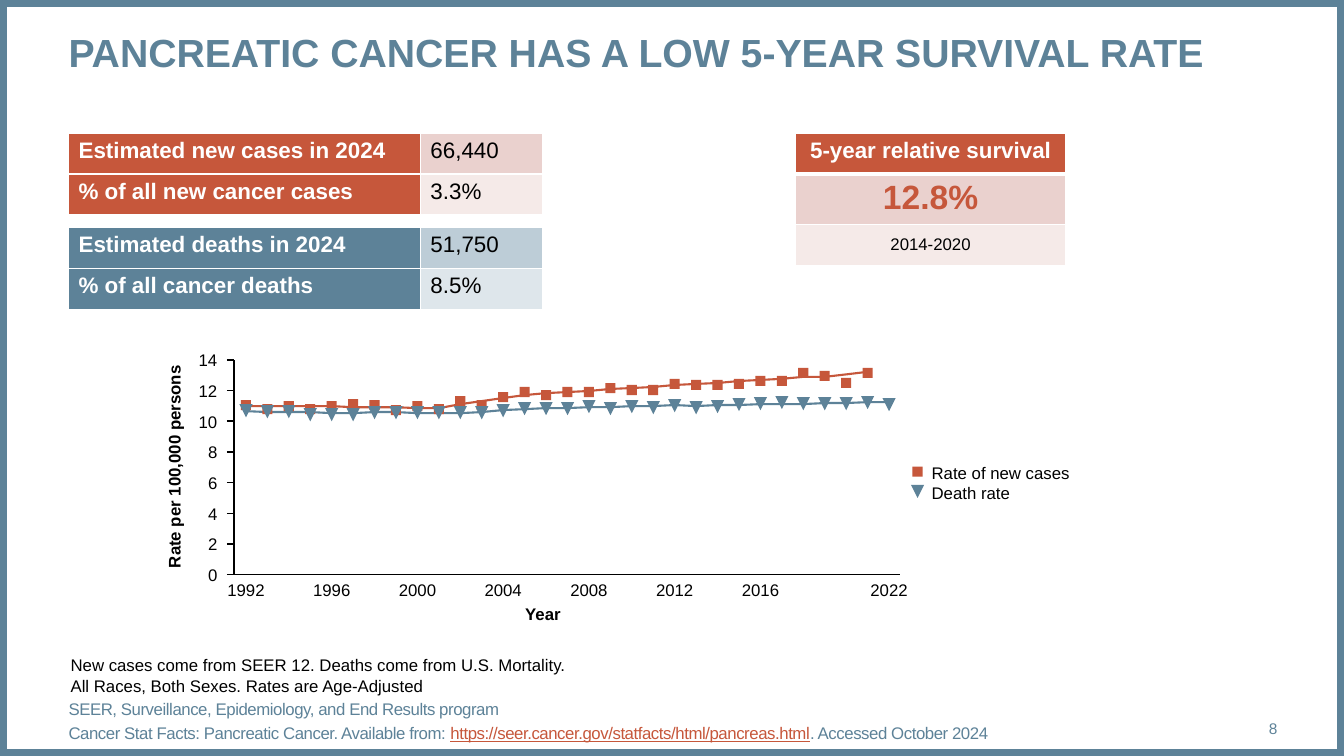
from dataclasses import dataclass

from lxml import etree
from pptx import Presentation
from pptx import util as u
from pptx.dml.color import RGBColor
from pptx.enum import shapes, text
from pptx.oxml import ns

WIDE, HIGH = u.Inches(13.33), u.Inches(7.5)
LEFT, MID, RIGHT = text.PP_ALIGN.LEFT, text.PP_ALIGN.CENTER, text.PP_ALIGN.RIGHT
SQUARE = shapes.MSO_SHAPE.RECTANGLE
WEDGE = shapes.MSO_SHAPE.ISOSCELES_TRIANGLE


@dataclass(frozen=True)
class Theme:
    font: str = "Arial"
    blue: str = "5D8298"
    blues: tuple = ("BDCDD7", "DEE6EB")
    red: str = "C6573B"
    reds: tuple = ("EAD1CE", "F5EAE8")
    black: str = "000000"
    white: str = "FFFFFF"
    title: int = 28
    big: int = 24
    cell: int = 16
    body: int = 12
    page: int = 11


T = Theme()

# Rates per 100,000 persons, one value a year from 1992
CASES = [11.04, 10.78, 10.98, 10.78, 10.98, 11.11, 11.04, 10.72, 10.98, 10.78,
         11.31, 11.04, 11.57, 11.9, 11.7, 11.9, 11.9, 12.16, 12.03, 12.03,
         12.43, 12.36, 12.36, 12.43, 12.62, 12.62, 13.15, 12.95, 12.49, 13.15]
DEATHS = [10.68, 10.62, 10.62, 10.42, 10.42, 10.42, 10.55, 10.55, 10.55, 10.55,
          10.55, 10.55, 10.68, 10.82, 10.82, 10.82, 10.95, 10.82, 10.95, 10.88,
          11.01, 10.88, 10.95, 11.08, 11.14, 11.21, 11.14, 11.14, 11.14, 11.21,
          11.08]
# Fitted trends: first year and yearly values
RISE = (1992, [10.98] * 5 + [10.91] * 3 + [10.85] * 2 + [
    11.11, 11.31, 11.51, 11.7, 11.83, 11.9, 11.97, 12.1, 12.16, 12.23,
    12.36, 12.43, 12.49, 12.62, 12.69])
LATE = (2016, [12.69, 12.76, 12.89, 12.89, 13.05, 13.22])
FLAT = (1992, [10.65] + [10.59] * 3 + [10.52] * 2 + [10.59] * 2 + [10.52] * 3
        + [10.59, 10.72, 10.78] + [10.85] * 2 + [10.91] * 2 + [10.98] * 2
        + [11.05, 10.98] + [11.05] * 2 + [11.11] * 3 + [11.18] * 2
        + [11.24] * 2)

# Plot area, in percent of the slide
AXIS, TICK, END = 17.4, 16.88, 67
TOP, BASE, PEAK = 47.6, 76, 14
FIRST, LAST = 18.3, 66.15


def wide(share):
    return int(WIDE * share / 100)


def high(share):
    return int(HIGH * share / 100)


def rgb(color):
    return RGBColor.from_string(color)


def year_x(year):
    return FIRST + (LAST - FIRST) * (year - 1992) / 30


def rate_y(rate):
    return BASE - (BASE - TOP) * rate / PEAK


def style(para, size, color, bold=False, align=LEFT):
    para.alignment = align
    font = para.font
    font.name, font.size, font.bold = T.font, u.Pt(size), bold
    font.color.rgb = rgb(color)


def label(slide, box, lines, size=T.body, color=T.black, bold=False,
          align=LEFT, anchor=text.MSO_ANCHOR.TOP):
    x, y, w, h = box
    shape = slide.shapes.add_textbox(wide(x), high(y), wide(w), high(h))
    frame = shape.text_frame
    frame.word_wrap, frame.vertical_anchor = True, anchor
    frame.margin_left = frame.margin_right = 0
    frame.margin_top = frame.margin_bottom = 0
    for i, line in enumerate(lines):
        para = frame.add_paragraph() if i else frame.paragraphs[0]
        para.text = line
        style(para, size, color, bold, align)
    return shape


def edge(cell, side, points):
    line = etree.SubElement(cell._tc.get_or_add_tcPr(), ns.qn("a:ln" + side),
                            w=str(u.Pt(points)))
    fill = etree.SubElement(line, ns.qn("a:solidFill"))
    etree.SubElement(fill, ns.qn("a:srgbClr"), val=T.white)


def grid(slide, x, y, cols, rows, cells):
    """Each cell holds: words, fill, size, color, bold, align."""
    frame = slide.shapes.add_table(len(rows), len(cols), wide(x), high(y),
                                   wide(sum(cols)), high(sum(rows)))
    table = frame.table
    for col, w in zip(table.columns, cols):
        col.width = wide(w)
    for row, h in zip(table.rows, rows):
        row.height = high(h)
    for cell, (words, fill, *look) in zip(table.iter_cells(), cells):
        for side in "LRTB":
            edge(cell, side, 1)
        cell.fill.solid()
        cell.fill.fore_color.rgb = rgb(fill)
        para = cell.text_frame.paragraphs[0]
        para.text = words
        style(para, *look)
    return table


def facts(slide, y, color, tints, pairs):
    cells = []
    for (name, value), tint in zip(pairs, tints):
        cells += [(name, color, T.cell, T.white, True, LEFT),
                  (value, tint, T.cell, T.black, False, LEFT)]
    grid(slide, 5.1, y, (26.18, 9.08), (5.42, 5.42), cells)


def rule(slide, x1, y1, x2, y2):
    line = slide.shapes.add_connector(shapes.MSO_CONNECTOR.STRAIGHT, wide(x1),
                                      high(y1), wide(x2), high(y2))
    line.line.color.rgb, line.line.width = rgb(T.black), u.Pt(1)
    etree.SubElement(line._element.spPr, ns.qn("a:effectLst"))


def mark(slide, kind, x, y):
    size = wide(0.75 if kind == SQUARE else 0.98)
    shape = slide.shapes.add_shape(kind, wide(x) - size // 2,
                                   high(y) - size // 2, size, size)
    shape.shadow.inherit = False
    shape.fill.solid()
    shape.fill.fore_color.rgb = rgb(T.red if kind == SQUARE else T.blue)
    shape.line.fill.background()
    shape.rotation = 0 if kind == SQUARE else 180


def trend(slide, start, rates, color):
    spots = [(wide(year_x(start + i)), high(rate_y(rate)))
             for i, rate in enumerate(rates)]
    path = slide.shapes.build_freeform(*spots[0])
    path.add_line_segments(spots[1:], close=False)
    shape = path.convert_to_shape()
    shape.shadow.inherit = False
    shape.fill.background()
    shape.line.color.rgb, shape.line.width = rgb(color), u.Pt(1.5)


def plot(slide):
    # Axes and their labels
    rule(slide, TICK, BASE, END, BASE)
    rule(slide, AXIS, BASE, AXIS, TOP)
    for rate in range(0, PEAK + 1, 2):
        y = rate_y(rate)
        if rate:
            rule(slide, TICK, y, AXIS, y)
        label(slide, (14.2, y - 1.3, 1.97, 2.67), [str(rate)], align=RIGHT)
    for year in (*range(1992, 2017, 4), 2022):
        label(slide, (year_x(year) - 1.54, 76.67, 3.08, 2.67), [str(year)],
              align=MID)
    label(slide, (38.4, 79.87, 4, 2.67), ["Year"], bold=True, align=MID)
    side = label(slide, (4.58, 60.4, 16.73, 2.67),
                 ["Rate per 100,000 persons"], bold=True, align=MID)
    side.rotation = 270

    # Trends and yearly marks
    for part, color in ((RISE, T.red), (LATE, T.red), (FLAT, T.blue)):
        trend(slide, *part, color)
    for kind, rates in ((SQUARE, CASES), (WEDGE, DEATHS)):
        for i, rate in enumerate(rates):
            mark(slide, kind, year_x(1992 + i), rate_y(rate))

    # Legend
    label(slide, (69.32, 61.2, 13.28, 5.33),
          ["Rate of new cases", "Death rate"])
    mark(slide, SQUARE, 68.27, 62.4)
    mark(slide, WEDGE, 68.27, 65)


def source(slide):
    box = label(slide, (5.1, 92.67, 83.5, 5.33),
                ["SEER, Surveillance, Epidemiology, and End Results program",
                 "Cancer Stat Facts: Pancreatic Cancer. Available from: "],
                color=T.blue, anchor=text.MSO_ANCHOR.MIDDLE)
    first, last = box.text_frame.paragraphs
    last.space_before = u.Pt(3)
    link = last.add_run()
    link.text = "https://seer.cancer.gov/statfacts/html/pancreas.html"
    link.font.underline, link.font.color.rgb = True, rgb(T.red)
    last.add_run().text = ". Accessed October 2024"
    for run in first.runs + last.runs:
        run._r.get_or_add_rPr().set("spc", "-30")


def main():
    deck = Presentation()
    deck.slide_width, deck.slide_height = WIDE, HIGH
    slide = deck.slides.add_slide(deck.slide_layouts[6])

    # Border and title
    border = slide.shapes.add_shape(SQUARE, 0, 0, WIDE, HIGH)
    border.shadow.inherit = False
    border.fill.background()
    border.line.color.rgb, border.line.width = rgb(T.blue), u.Pt(10)
    label(slide, (5.1, 3.73, 89.95, 12.53),
          ["PANCREATIC CANCER HAS A LOW 5-YEAR SURVIVAL RATE"],
          T.title, T.blue, True)

    # Tables
    facts(slide, 17.6, T.red, T.reds,
          [("Estimated new cases in 2024", "66,440"),
           ("% of all new cancer cases", "3.3%")])
    facts(slide, 30.13, T.blue, T.blues,
          [("Estimated deaths in 2024", "51,750"),
           ("% of all cancer deaths", "8.5%")])
    table = grid(slide, 59.19, 17.6, (20.1,), (5.42, 6.5, 5.42), [
        ("5-year relative survival", T.red, T.cell, T.white, True, MID),
        ("12.8%", T.reds[0], T.big, T.red, True, MID),
        ("2014-2020", T.reds[1], T.body, T.black, False, MID)])
    table.cell(2, 0).vertical_anchor = text.MSO_ANCHOR.MIDDLE
    for row, side in ((0, "B"), (1, "T")):
        props = table.cell(row, 0)._tc.tcPr
        props.find(ns.qn("a:ln" + side)).set("w", str(u.Pt(3)))

    plot(slide)

    # Notes, source and page number
    label(slide, (5.25, 86.67, 42.09, 5.33),
          ["New cases come from SEER 12. Deaths come from U.S. Mortality.\n"
           "All Races, Both Sexes. Rates are Age-Adjusted"])
    source(slide)
    label(slide, (88.6, 93.73, 6.45, 5.33), ["8"], T.page, T.blue,
          align=RIGHT, anchor=text.MSO_ANCHOR.MIDDLE)
    deck.save("out.pptx")


if __name__ == "__main__":
    main()
